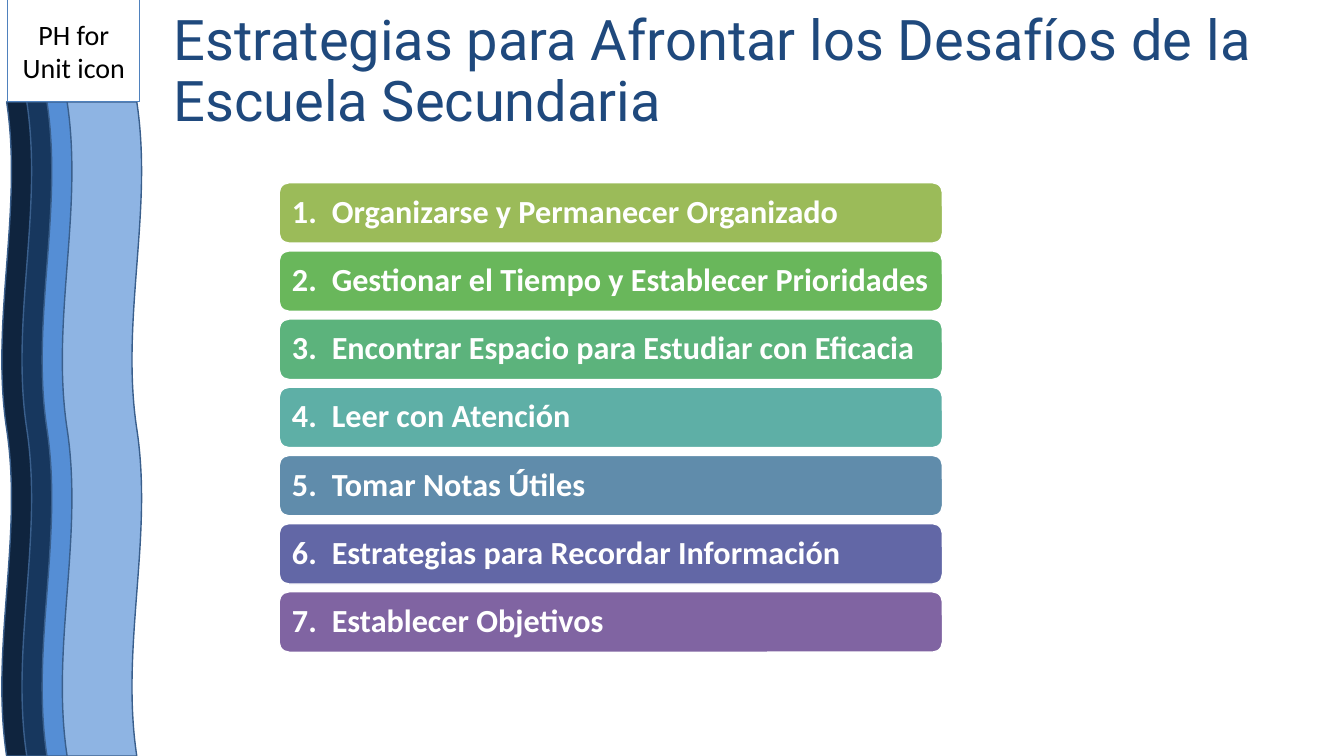
from dataclasses import dataclass

from lxml import etree
from pptx import Presentation
from pptx.dml.color import RGBColor
from pptx.enum.shapes import MSO_SHAPE
from pptx.enum.text import MSO_ANCHOR, PP_ALIGN
from pptx.oxml.ns import qn
from pptx.util import Pt

RECT = MSO_SHAPE.RECTANGLE
ROUND_RECT = MSO_SHAPE.ROUNDED_RECTANGLE
DOUBLE_WAVE = MSO_SHAPE.DOUBLE_WAVE
MIDDLE = MSO_ANCHOR.MIDDLE
LEFT, CENTER = PP_ALIGN.LEFT, PP_ALIGN.CENTER


@dataclass(frozen=True)
class Theme:
    """Colours, fonts and type sizes of the slide."""
    title_font: str = "Roboto"
    body_font: str = "Calibri"
    title_size: float = 40
    icon_size: float = 20
    bar_size: float = 23
    title: str = "1F497D"
    white: str = "FFFFFF"
    black: str = "000000"
    icon_line: str = "4F81BD"
    wave_line: str = "3A5F8C"
    waves: tuple = ("0F243E", "17375E", "558ED5", "8EB4E3")
    bars: tuple = ("9BBB59", "69B75B", "5CB37C", "5EAFA6",
                   "608CAB", "6267A6", "8064A2")


THEME = Theme()
TITLE = "Estrategias para Afrontar los Desafíos de la Escuela Secundaria"
STRATEGIES = (
    "Organizarse y Permanecer Organizado",
    "Gestionar el Tiempo y Establecer Prioridades",
    "Encontrar Espacio para Estudiar con Eficacia",
    "Leer con Atención",
    "Tomar Notas Útiles",
    "Estrategias para Recordar Información",
    "Establecer Objetivos",
)


def add_box(slide, kind, box, fill, line, weight=1):
    """Add a filled and outlined preset shape without shadow."""
    sp = slide.shapes.add_shape(kind, *map(Pt, box))
    sp.shadow.inherit = False
    sp.fill.solid()
    sp.fill.fore_color.rgb = RGBColor.from_string(fill)
    sp.line.color.rgb = RGBColor.from_string(line)
    sp.line.width = Pt(weight)
    return sp


def set_text(sp, text, font, size, color, align=LEFT, bold=False):
    """Write one vertically centred paragraph and return it."""
    tf = sp.text_frame
    tf.text = text
    tf.word_wrap = True
    tf.vertical_anchor = MIDDLE
    p = tf.paragraphs[0]
    p.alignment = align
    r = p.runs[0]
    r.font.name = font
    r.font.size = Pt(size)
    r.font.bold = bold
    r.font.color.rgb = RGBColor.from_string(color)
    return p


def add_waves(slide, left, top, width, height):
    """Overlap upright wave bands evenly across the box."""
    band = 56.9
    step = (width - band) / (len(THEME.waves) - 1)
    for i, color in enumerate(THEME.waves):
        x = left + i * step + (band - height) / 2
        y = top + (height - band) / 2
        sp = add_box(slide, DOUBLE_WAVE, (x, y, height, band), color, THEME.wave_line)
        sp.rotation = 270


def add_icon(slide, *box):
    """Add the framed unit icon label."""
    sp = add_box(slide, RECT, box, THEME.white, THEME.icon_line, 0.75)
    set_text(sp, "PH for Unit icon", THEME.body_font, THEME.icon_size,
             THEME.black, CENTER)


def add_title(slide, *box):
    """Add the slide title."""
    sp = slide.shapes.add_textbox(*map(Pt, box))
    p = set_text(sp, TITLE, THEME.title_font, THEME.title_size, THEME.title)
    p.line_spacing = 0.9


def add_strategies(slide, left, top, width, height):
    """Stack the numbered strategy bars evenly in the box."""
    bar = 43.2
    step = (height - bar) / (len(STRATEGIES) - 1)
    for i, (name, color) in enumerate(zip(STRATEGIES, THEME.bars)):
        sp = add_box(slide, ROUND_RECT, (left, top + i * step, width, bar),
                     color, THEME.white)
        sp.text_frame.margin_right = 0
        p = set_text(sp, f"{i + 1}.\t{name}", THEME.body_font, THEME.bar_size,
                     THEME.white, bold=True)
        p.line_spacing = 0.9
        tabs = etree.SubElement(p._p.get_or_add_pPr(), qn("a:tabLst"))
        etree.SubElement(tabs, qn("a:tab"), pos=str(Pt(28.4)), algn="l")


def main():
    """Build and save the slide."""
    prs = Presentation()
    prs.slide_width, prs.slide_height = Pt(960), Pt(540)
    slide = prs.slides.add_slide(prs.slide_layouts[6])
    add_waves(slide, 1.2, 72.8, 100.1, 467.2)
    add_icon(slide, 5.5, 0, 94.5, 72.8)
    add_title(slide, 116.9, 16.2, 823, 72)
    add_strategies(slide, 199.4, 130.5, 473.8, 335.4)
    prs.save("out.pptx")


if __name__ == "__main__":
    main()
